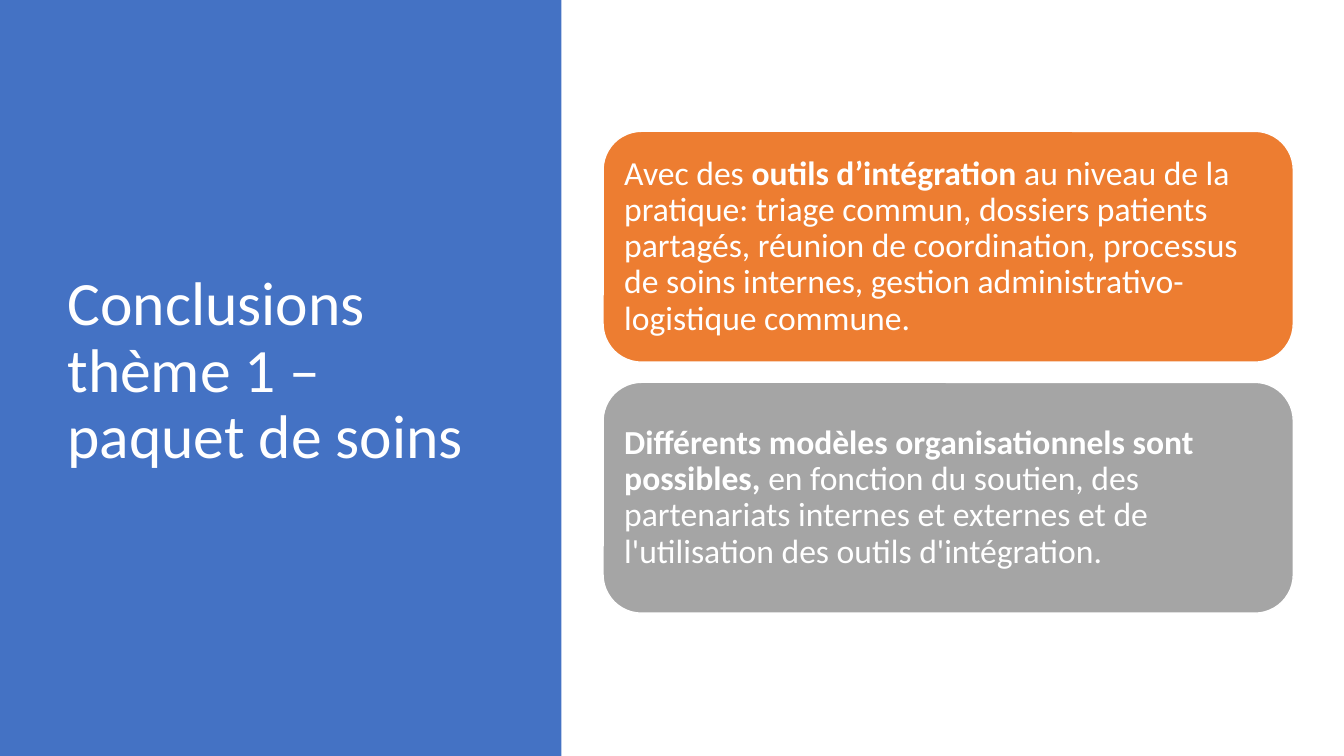
from pptx import Presentation
from pptx.dml.color import RGBColor
from pptx.enum.shapes import MSO_SHAPE as Shape
from pptx.enum.text import MSO_ANCHOR as Anchor, MSO_AUTO_SIZE as AutoSize, PP_ALIGN as Align
from pptx.util import Pt

COLORS = {"blue": "4472C4", "orange": "ED7D31", "grey": "A5A5A5", "white": "FFFFFF"}
FONT = "Calibri"

# Each conclusion: fill colour and its (text, bold) runs
CONCLUSIONS = [
    ("orange", [
        ("Avec des ", False),
        ("outils d’intégration ", True),
        ("au niveau de la pratique: triage commun, dossiers patients partagés, "
         "réunion de coordination, processus de soins internes, "
         "gestion administrativo-logistique commune.", False),
    ]),
    ("grey", [
        ("Différents modèles organisationnels sont possibles, ", True),
        ("en fonction du soutien, des partenariats internes et externes et de "
         "l'utilisation des outils d'intégration.", False),
    ]),
]


def color(name):
    return RGBColor.from_string(COLORS[name])


def add_block(slide, kind, box, fill):
    """Add a filled shape without shadow or outline."""
    block = slide.shapes.add_shape(kind, *(Pt(length) for length in box))
    block.shadow.inherit = False
    block.fill.solid()
    block.fill.fore_color.rgb = color(fill)
    block.line.fill.background()
    return block


def style_text(frame, size):
    """White, left-aligned, vertically centred text."""
    frame.word_wrap = True
    frame.auto_size = AutoSize.NONE
    frame.vertical_anchor = Anchor.MIDDLE
    paragraph = frame.paragraphs[0]
    paragraph.alignment = Align.LEFT
    paragraph.line_spacing = 0.9
    paragraph.font.name = FONT
    paragraph.font.size = Pt(size)
    paragraph.font.color.rgb = color("white")
    return paragraph


def add_title_panel(slide, left, top, width, height):
    panel = add_block(slide, Shape.RECTANGLE, (left, top, width, height), "blue")
    # Send the panel behind the title
    slide.shapes._spTree.insert(2, panel._element)

    title = slide.shapes.title
    title.left, title.top = Pt(left + 41), Pt(top + 49)
    title.width, title.height = Pt(width - 101.5), Pt(height - 106.5)
    title.text_frame.text = "Conclusions thème 1 – paquet de soins"
    style_text(title.text_frame, 44)


def add_conclusions(slide, left, top, width, height, gap=14.4):
    card_height = (height - gap * (len(CONCLUSIONS) - 1)) / len(CONCLUSIONS)
    for row, (fill, runs) in enumerate(CONCLUSIONS):
        card_top = top + row * (card_height + gap)
        card = add_block(slide, Shape.ROUNDED_RECTANGLE,
                         (left, card_top, width, card_height), fill)
        card.line.color.rgb = color("white")
        card.line.width = Pt(1)
        frame = card.text_frame
        frame.margin_left = frame.margin_right = Pt(7.2)
        frame.margin_top = frame.margin_bottom = Pt(7.2)
        paragraph = style_text(frame, 24)
        for text, bold in runs:
            run = paragraph.add_run()
            run.text = text
            run.font.bold = bold


def main():
    deck = Presentation()
    deck.slide_width, deck.slide_height = Pt(960), Pt(540)
    slide = deck.slides.add_slide(deck.slide_layouts[5])
    add_title_panel(slide, 0, 0, 401, 540)
    add_conclusions(slide, 430.8, 93.8, 493, 344.2)
    deck.save("out.pptx")


if __name__ == "__main__":
    main()
